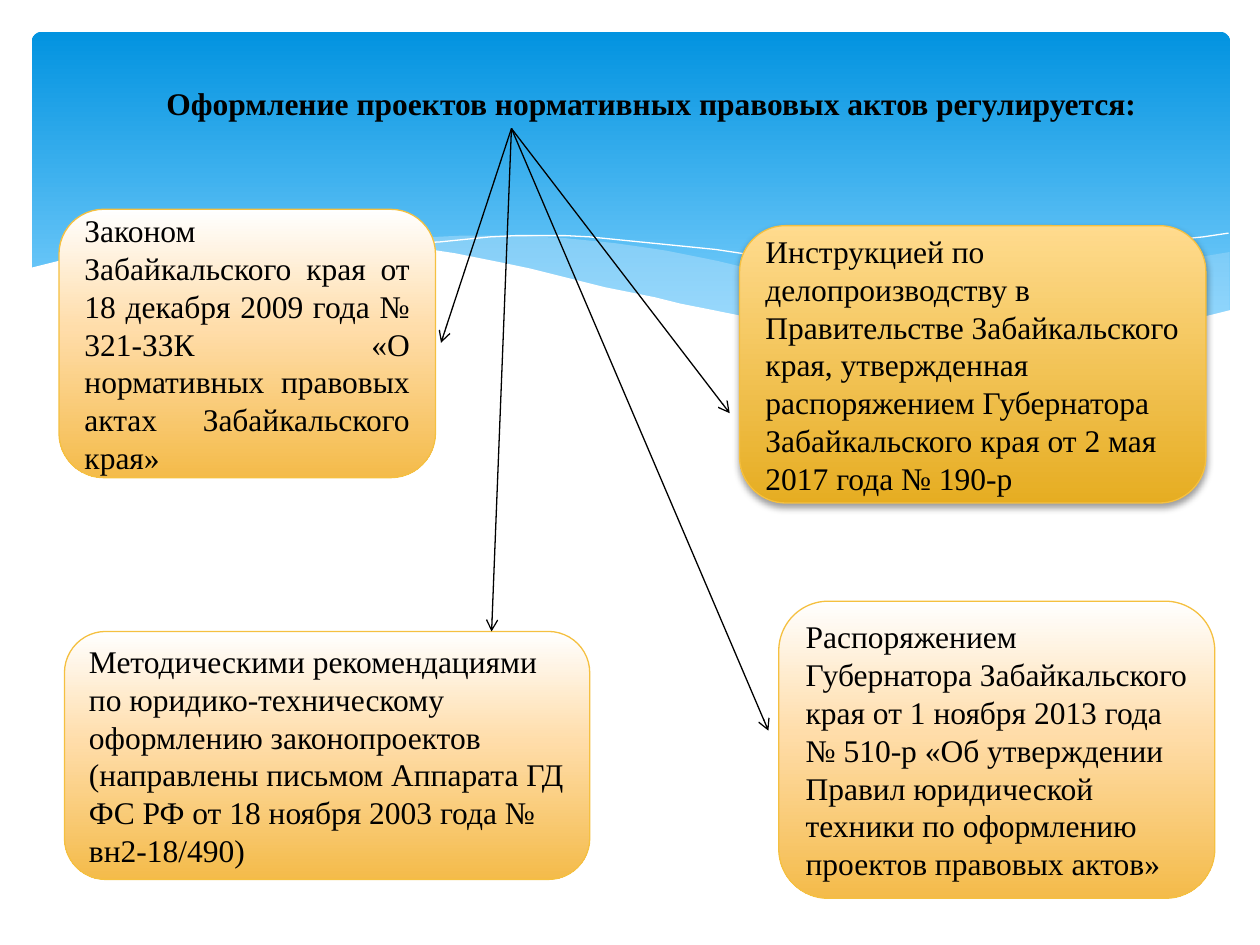
from copy import deepcopy
from dataclasses import dataclass

from lxml.etree import SubElement
from pptx import Presentation
from pptx.dml.color import RGBColor
from pptx.enum.shapes import MSO_CONNECTOR, MSO_SHAPE
from pptx.enum.text import MSO_ANCHOR, MSO_AUTO_SIZE, PP_ALIGN
from pptx.oxml.ns import qn
from pptx.util import Cm, Pt


@dataclass(frozen=True)
class Theme:
    font: str = "Times New Roman"
    text_size: int = 18
    ink: str = "000000"
    white: str = "FFFFFF"
    wave: str = "C6E7FC"
    box_line: str = "F5C040"
    line_width: float = 0.75
    header: tuple = ((0, "0293E0"), (0.9, "83D3FE"))
    pale: tuple = ((0, "FFFFFF"), (0.44, "FFDDAA"), (1, "F4BB4A"))
    gold: tuple = ((0, "FFDB8E"), (1, "E6AD22"))


theme = Theme()


def fill_downwards(shape, stops):
    """Fill a shape with a top-to-bottom gradient of (position, colour) stops."""
    shape.fill.gradient()
    shape.fill.gradient_angle = 270
    stop_list = shape._element.spPr.find(".//" + qn("a:gsLst"))
    while len(stop_list) < len(stops):
        stop_list.append(deepcopy(stop_list[0]))
    for stop, (position, color) in zip(shape.fill.gradient_stops, stops):
        stop.position = position
        stop.color.rgb = RGBColor.from_string(color)


def smooth_edge(left, right, heights, steps=6):
    """Return points of a smooth curve through evenly spaced heights."""
    first, last = 2 * heights[0] - heights[1], 2 * heights[-1] - heights[-2]
    knots = [first, *heights, last]
    gap = (right - left) / (len(heights) - 1)
    points = []
    for i, (a, b, c, d) in enumerate(zip(knots, knots[1:], knots[2:], knots[3:])):
        for t in (step / steps for step in range(steps)):
            rise = (c - a) * t + (2 * a - 5 * b + 4 * c - d) * t**2 + (3 * (b - c) + d - a) * t**3
            points.append((left + gap * (i + t), b + rise / 2))
    return points + [(right, heights[-1])]


deck = Presentation()
deck.slide_width, deck.slide_height = Cm(25.4), Cm(19.05)
slide = deck.slides.add_slide(deck.slide_layouts[5])
shapes = slide.shapes

# Blue header
header = shapes.add_shape(MSO_SHAPE.ROUNDED_RECTANGLE, Cm(0.64), Cm(0.64), Cm(24.16), Cm(6.86))
header.adjustments[0] = 0.03
header.shadow.inherit = False
header.line.fill.background()
fill_downwards(header, theme.header)

# Waves in hundredths of an inch: colour, opacity, left, right, upper and lower heights.
# A wave without lower heights is a bare curve.
waves = [
    (theme.wave, 29, 661, 976, [265, 245, 220, 200], [265, 277, 274, 247]),
    (theme.wave, 40, 286, 893, [191, 187, 199, 227, 253, 273], [191, 213, 241, 264, 277, 273]),
    (theme.white, 100, 309, 907, [195, 187, 196, 214, 239, 272], []),
    (theme.white, 100, 613, 975, [257, 226, 201, 185], []),
    (theme.white, 100, 23, 977, [213, 185, 187, 205, 232, 257, 273, 274, 246], [329, 329]),
]
for color, opacity, left, right, upper, lower in waves:
    points = smooth_edge(left, right, upper)
    if lower:
        points += reversed(smooth_edge(left, right, lower))
    outline = shapes.build_freeform(*points[0], scale=Cm(2.54) / 100)
    outline.add_line_segments(points[1:], close=bool(lower))
    wave = outline.convert_to_shape()
    wave.shadow.inherit = False
    if not lower:
        wave.fill.background()
        wave.line.color.rgb = RGBColor.from_string(color)
        wave.line.width = Pt(0)
        continue
    wave.line.fill.background()
    wave.fill.solid()
    wave.fill.fore_color.rgb = RGBColor.from_string(color)
    if opacity < 100:
        wave_color = wave._element.spPr.find(".//" + qn("a:srgbClr"))
        SubElement(wave_color, qn("a:alpha"), val=str(opacity * 1000))

# Title, brought in front of the header
title = shapes.title
shapes._spTree.append(title._element)
title.left, title.top, title.width, title.height = Cm(3.1), Cm(1.57), Cm(20.42), Cm(1.02)
title.text_frame.word_wrap = False
title.text_frame.auto_size = MSO_AUTO_SIZE.SHAPE_TO_FIT_TEXT
title.text_frame.vertical_anchor = MSO_ANCHOR.TOP
heading = title.text_frame.paragraphs[0]
heading.alignment = PP_ALIGN.LEFT
heading_run = heading.add_run()
heading_run.text = "Оформление проектов нормативных правовых актов регулируется:"
heading_run.font.bold = True
runs = [heading_run]

# Regulating acts: place, gradient, alignment, raised by a shadow, wording
acts = [
    ((1.19, 4.22, 7.59, 5.41), theme.pale, PP_ALIGN.JUSTIFY, False,
     "Законом Забайкальского края от 18 декабря 2009 года № 321-ЗЗК "
     "«О нормативных правовых актах Забайкальского края»"),
    ((14.91, 4.55, 9.4, 5.59), theme.gold, PP_ALIGN.LEFT, True,
     "Инструкцией по делопроизводству в Правительстве Забайкальского края, утвержденная "
     "распоряжением Губернатора Забайкальского края от 2 мая 2017 года № 190-р"),
    ((1.3, 12.73, 10.59, 5), theme.pale, PP_ALIGN.LEFT, False,
     "Методическими рекомендациями по юридико-техническому оформлению законопроектов "
     "(направлены письмом Аппарата ГД ФС РФ от 18 ноября 2003 года № вн2-18/490)"),
    ((15.7, 12.12, 8.79, 5.99), theme.pale, PP_ALIGN.LEFT, False,
     "Распоряжением Губернатора Забайкальского края от 1 ноября 2013 года № 510-р "
     "«Об утверждении Правил юридической техники по оформлению проектов правовых актов»"),
]
for place, stops, alignment, raised, wording in acts:
    act = shapes.add_shape(MSO_SHAPE.ROUNDED_RECTANGLE, *map(Cm, place))
    act.shadow.inherit = False
    fill_downwards(act, stops)
    act.line.color.rgb = RGBColor.from_string(theme.box_line)
    act.line.width = Pt(theme.line_width)
    if raised:
        effects = act._element.spPr.find(qn("a:effectLst"))
        shadow = SubElement(effects, qn("a:outerShdw"), blurRad=str(Pt(4)), dist=str(Pt(2)),
                            dir="5400000", rotWithShape="0")
        shadow_color = SubElement(shadow, qn("a:srgbClr"), val=theme.ink)
        SubElement(shadow_color, qn("a:alpha"), val="38000")
    act.text_frame.word_wrap = True
    act.text_frame.vertical_anchor = MSO_ANCHOR.MIDDLE
    provision = act.text_frame.paragraphs[0]
    provision.alignment = alignment
    provision_run = provision.add_run()
    provision_run.text = wording
    runs.append(provision_run)

for run in runs:
    run.font.name = theme.font
    run.font.size = Pt(theme.text_size)
    run.font.color.rgb = RGBColor.from_string(theme.ink)

# Arrows from the title to each act
arrow_start = (10.31, 2.59)
for arrow_end in [(8.89, 6.91), (9.91, 12.73), (14.71, 8.33), (15.49, 14.73)]:
    arrow = shapes.add_connector(MSO_CONNECTOR.STRAIGHT, *map(Cm, arrow_start + arrow_end))
    arrow.line.color.rgb = RGBColor.from_string(theme.ink)
    arrow.line.width = Pt(theme.line_width)
    SubElement(arrow.line._get_or_add_ln(), qn("a:tailEnd"), type="arrow")
    SubElement(arrow._element.spPr, qn("a:effectLst"))

deck.save("out.pptx")
